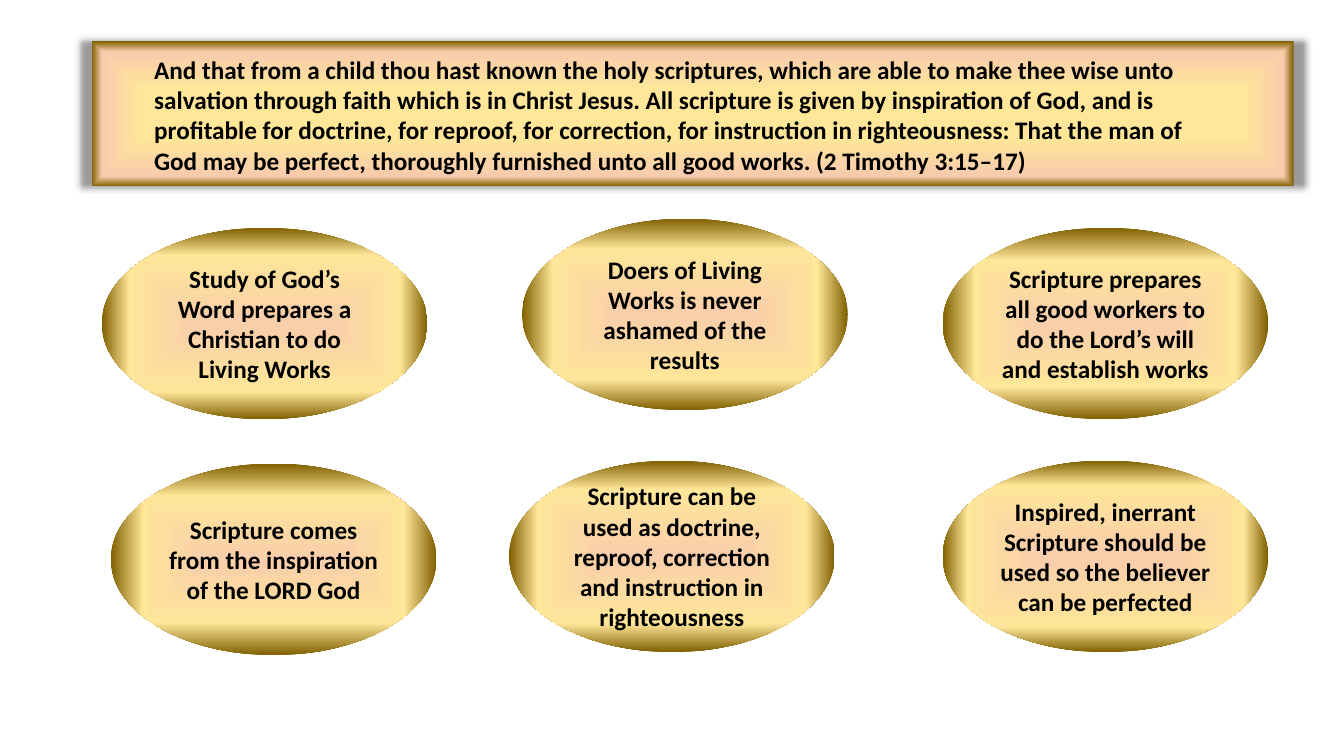
from dataclasses import dataclass

from lxml import etree
from pptx import Presentation
from pptx.dml.color import RGBColor
from pptx.enum.shapes import MSO_SHAPE
from pptx.enum.text import MSO_ANCHOR, MSO_AUTO_SIZE, PP_ALIGN
from pptx.oxml import parse_xml
from pptx.oxml.ns import nsdecls, qn
from pptx.util import Inches, Pt

RECT, OVAL = MSO_SHAPE.RECTANGLE, MSO_SHAPE.OVAL
LEFT, CENTER = PP_ALIGN.LEFT, PP_ALIGN.CENTER
TOP, MIDDLE = MSO_ANCHOR.TOP, MSO_ANCHOR.MIDDLE
GROW = MSO_AUTO_SIZE.SHAPE_TO_FIT_TEXT


@dataclass(frozen=True)
class Theme:
    font: str = "Calibri"
    size: int = 18
    ink: str = "000000"
    cream: str = "FFE699"
    peach: str = "F8CBAD"
    blush: str = "F9CEAB"
    bronze: str = "806000"


class Board:
    def __init__(self, deck, theme):
        self.deck = deck
        self.theme = theme
        self.slide = deck.slides.add_slide(deck.slide_layouts[6])

    def place(self, left, top, width, height):
        wide, high = self.deck.slide_width, self.deck.slide_height
        return [round(share * side / 100) for share, side in
                zip((left, top, width, height), (wide, high, wide, high))]

    def glow(self, kind, box, stops):
        shape = self.slide.shapes.add_shape(kind, *self.place(*box))
        shape.shadow.inherit = False
        shape.line.fill.background()
        marks = "".join(
            f'<a:gs pos="{spot * 1000}"><a:srgbClr val="{color}"/></a:gs>'
            for spot, color in stops)
        fill = parse_xml(
            f'<a:gradFill {nsdecls("a")} rotWithShape="1"><a:gsLst>{marks}</a:gsLst>'
            '<a:path path="shape"><a:fillToRect l="50000" t="50000" r="50000" b="50000"/>'
            '</a:path></a:gradFill>')
        shape._element.spPr.find(qn("a:prstGeom")).addnext(fill)
        return shape

    def label(self, shape, text, align, anchor):
        frame = shape.text_frame
        frame.word_wrap = True
        frame.vertical_anchor = anchor
        frame.text = text
        for para in frame.paragraphs:
            para.alignment = align
            for run in para.runs:
                run.font.name = self.theme.font
                run.font.size = Pt(self.theme.size)
                run.font.bold = True
                run.font.color.rgb = RGBColor.from_string(self.theme.ink)

    def panel(self, box):
        look = self.theme
        shape = self.glow(RECT, box, [(33, look.cream), (86, look.peach), (100, look.bronze)])
        effect = shape._element.spPr.find(qn("a:effectLst"))
        shade = etree.SubElement(effect, qn("a:outerShdw"), blurRad=str(Pt(5)),
                                 sx="102000", sy="102000", algn="ctr", rotWithShape="0")
        color = etree.SubElement(shade, qn("a:srgbClr"), val=look.ink)
        etree.SubElement(color, qn("a:alpha"), val="40000")

    def oval(self, box, start, mid, text):
        look = self.theme
        shape = self.glow(OVAL, box, [(start, look.blush), (mid, look.cream), (100, look.bronze)])
        self.label(shape, text, CENTER, MIDDLE)

    def verse(self, box, text):
        shape = self.slide.shapes.add_textbox(*self.place(*box))
        self.label(shape, text, LEFT, TOP)
        shape.text_frame.auto_size = GROW


VERSE = (
    "And that from a child thou hast known the holy scriptures, which are able to make "
    "thee wise unto salvation through faith which is in Christ Jesus. All scripture is "
    "given by inspiration of God, and is profitable for doctrine, for reproof, for "
    "correction, for instruction in righteousness: That the man of God may be perfect, "
    "thoroughly furnished unto all good works. (2 Timothy 3:15–17)")

WIDTH, HEIGHT = 24.23, 25.33
POINTS = [
    (7.58, 30.13, 0, 71, "Study of God’s Word prepares a Christian to do Living Works"),
    (8.25, 61.33, 0, 66, "Scripture comes from the inspiration of the LORD God"),
    (37.88, 60.93, 0, 70, "Scripture can be used as doctrine, reproof, correction "
                          "and instruction in righteousness"),
    (38.85, 28.93, 0, 68, "Doers of Living Works is never ashamed of the results"),
    (70.13, 60.93, 4, 74, "Inspired, inerrant Scripture should be used so the believer "
                          "can be perfected"),
    (70.13, 30.13, 0, 66, "Scripture prepares all good workers to do the Lord’s will "
                          "and establish works"),
]


def main():
    deck = Presentation()
    deck.slide_width, deck.slide_height = Inches(13.33), Inches(7.5)
    board = Board(deck, Theme())
    board.panel((6.83, 5.47, 89.42, 19.2))
    for left, top, start, mid, text in POINTS:
        board.oval((left, top, WIDTH, HEIGHT), start, mid, text)
    board.verse((10.73, 6.53, 81.62, 17.47), VERSE)
    deck.save("out.pptx")


if __name__ == "__main__":
    main()
